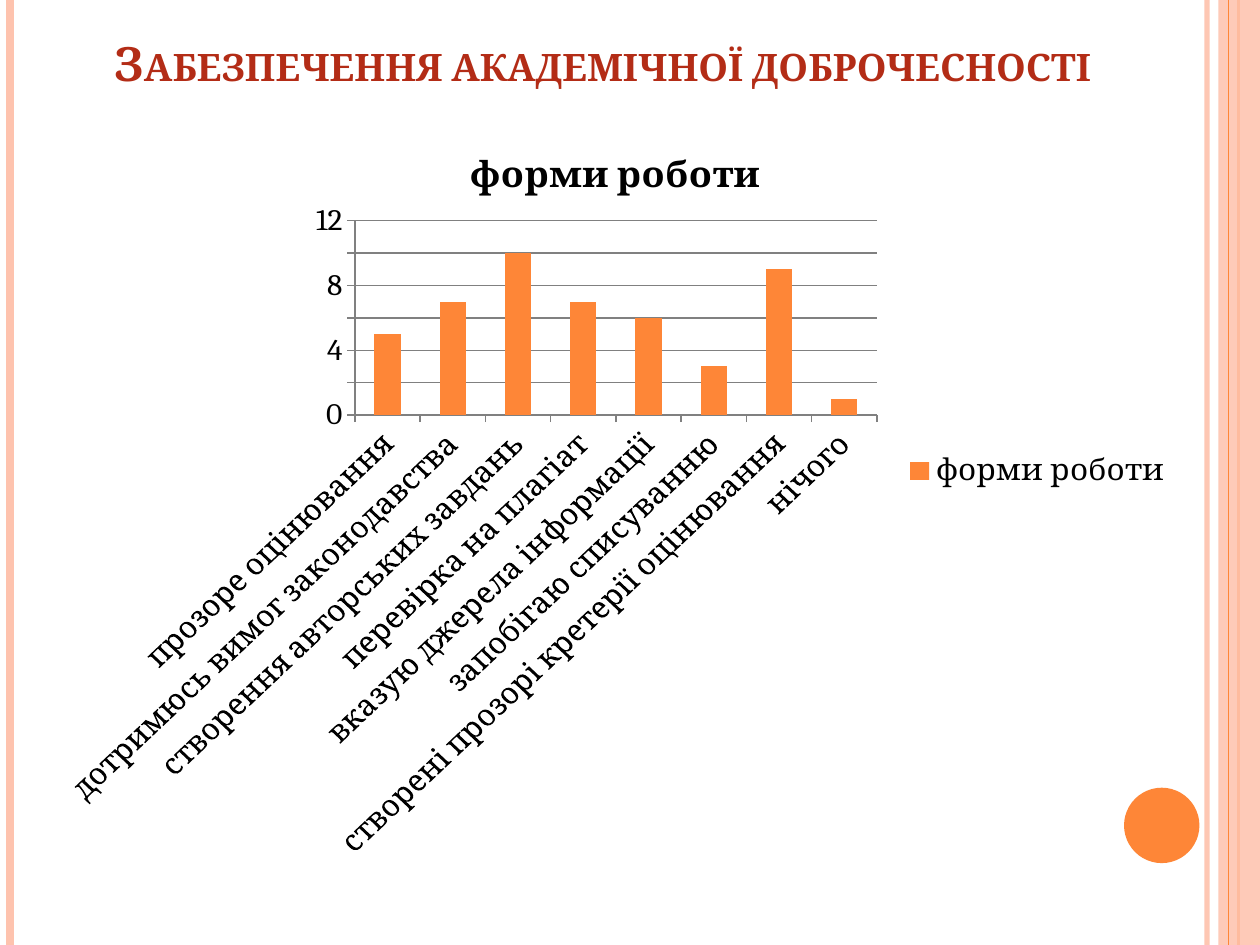
from lxml import etree
from pptx import Presentation, util as u
from pptx.chart.data import CategoryChartData
from pptx.dml.color import RGBColor
from pptx.enum import chart as charts, shapes, text
from pptx.oxml.ns import qn

# Content
TITLE = "Забезпечення академічної доброчесності"
SERIES = "форми роботи"
ANSWERS = [
    ("прозоре оцінювання", 5),
    ("дотримюсь вимог законодавства", 7),
    ("створення авторських завдань", 10),
    ("перевірка на плагіат", 7),
    ("вказую джерела інформації", 6),
    ("запобігаю списуванню", 3),
    ("створені прозорі кретерії оцінювання", 9),
    ("нічого", 1),
]

THEME = {
    "font": "Cambria", "title_size": 27, "chart_title_size": 21.6, "chart_size": 18,
    "title": "B32C16", "accent": "FE8637", "pale": "FEC3AE", "text": "000000", "axis": "808080",
}

# Lengths in centimetres
WIDTH, HEIGHT = 25.4, 19.05
# Vertical rules: x, colour, weight in points, opacity in percent
RULES_BELOW = [(24.33, "pale", 3, 93), (0.2, "pale", 4.5, 100), (24.97, "accent", 1.5, 100)]
RULES_ABOVE = [(24.77, "accent", 0.75, 100)]
BAND = (24.56, 0, 0.84, HEIGHT)
DISC = (22.66, 15.88, 1.52, 1.52)
TITLE_BOX = (0, 0, 24.31, 1.96)
CHART_BOX = (0.89, 2.51, 23.01, 14.81)


def colour(name):
    return RGBColor.from_string(THEME[name])


def lengths(box):
    return [u.Cm(value) for value in box]


def set_opacity(element, percent):
    if percent < 100:
        fill_colour = next(element.iter(qn("a:srgbClr")))
        etree.SubElement(fill_colour, qn("a:alpha")).set("val", str(percent * 1000))


def style_font(font, size, name, bold=False):
    font.name = THEME["font"]
    font.size = u.Pt(THEME[size])
    font.bold = bold
    font.color.rgb = colour(name)


def add_rules(page, rules):
    for x, name, weight, opacity in rules:
        rule = page.shapes.add_connector(
            shapes.MSO_CONNECTOR.STRAIGHT, *lengths((x, 0, x, HEIGHT)))
        rule.line.color.rgb = colour(name)
        rule.line.width = u.Pt(weight)
        properties = rule._element.spPr
        set_opacity(properties, opacity)
        etree.SubElement(properties, qn("a:effectLst"))


def add_filled(page, kind, box, name, opacity=100):
    shape = page.shapes.add_shape(kind, *lengths(box))
    shape.shadow.inherit = False
    shape.fill.solid()
    shape.fill.fore_color.rgb = colour(name)
    shape.line.fill.background()
    set_opacity(shape._element.spPr, opacity)


def add_title(page):
    title = page.shapes.title
    title.left, title.top, title.width, title.height = lengths(TITLE_BOX)
    frame = title.text_frame
    frame.word_wrap = True
    frame.auto_size = text.MSO_AUTO_SIZE.NONE
    frame.vertical_anchor = text.MSO_ANCHOR.BOTTOM
    para = frame.paragraphs[0]
    para.alignment = text.PP_ALIGN.CENTER
    span = para.add_run()
    span.text = TITLE
    style_font(span.font, "title_size", "title", bold=True)
    span._r.get_or_add_rPr().set("cap", "small")


def add_answers_chart(page):
    data = CategoryChartData()
    data.categories = [label for label, _ in ANSWERS]
    data.add_series(SERIES, [count for _, count in ANSWERS])
    chart = page.shapes.add_chart(
        charts.XL_CHART_TYPE.COLUMN_CLUSTERED, *lengths(CHART_BOX), data).chart
    style_font(chart.font, "chart_size", "text")

    # Title and legend
    chart.has_title = True
    span = chart.chart_title.text_frame.paragraphs[0].add_run()
    span.text = SERIES
    style_font(span.font, "chart_title_size", "text", bold=True)
    chart.has_legend = True
    chart.legend.position = charts.XL_LEGEND_POSITION.RIGHT
    chart.legend.include_in_layout = False

    # Columns
    plot = chart.plots[0]
    plot.gap_width = 150
    plot.vary_by_categories = False
    columns = plot.series[0]
    columns.format.fill.solid()
    columns.format.fill.fore_color.rgb = colour("accent")

    # Axes
    counts = chart.value_axis
    counts.minimum_scale, counts.maximum_scale, counts.major_unit = 0, 12, 2
    counts.has_major_gridlines = True
    for axis in (chart.category_axis, counts):
        axis.major_tick_mark = charts.XL_TICK_MARK.OUTSIDE
        style_font(axis.tick_labels.font, "chart_size", "text")
    for part in (chart.category_axis, counts, counts.major_gridlines):
        part.format.line.color.rgb = colour("axis")
        part.format.line.width = u.Pt(0.75)


def main():
    deck = Presentation()
    deck.slide_width, deck.slide_height = u.Cm(WIDTH), u.Cm(HEIGHT)
    page = deck.slides.add_slide(deck.slide_layouts[5])

    # Side decoration
    add_rules(page, RULES_BELOW)
    add_filled(page, shapes.MSO_SHAPE.RECTANGLE, BAND, "pale", 87)
    add_rules(page, RULES_ABOVE)
    add_filled(page, shapes.MSO_SHAPE.OVAL, DISC, "accent")

    # Main content
    add_title(page)
    add_answers_chart(page)
    deck.save("out.pptx")


if __name__ == "__main__":
    main()
